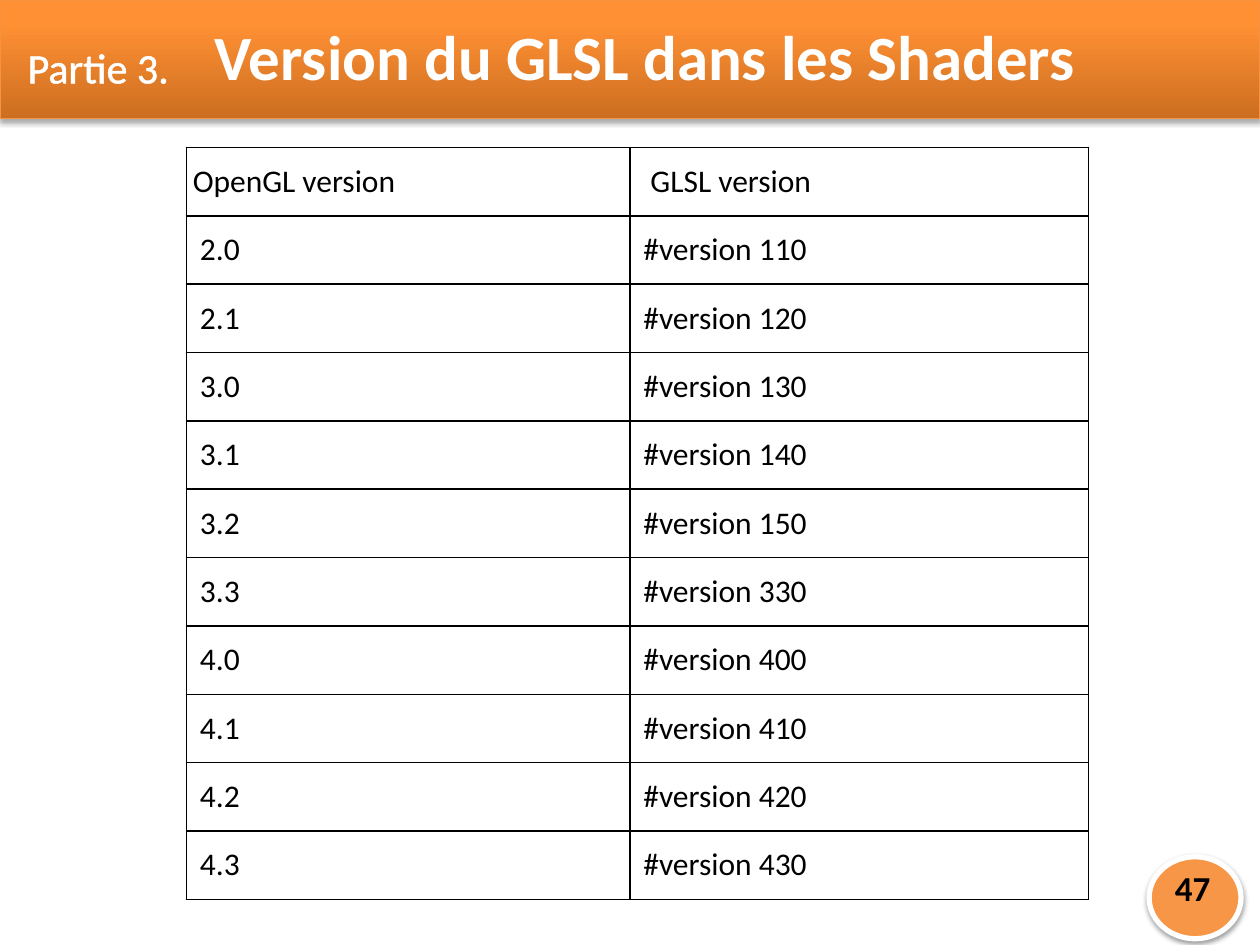
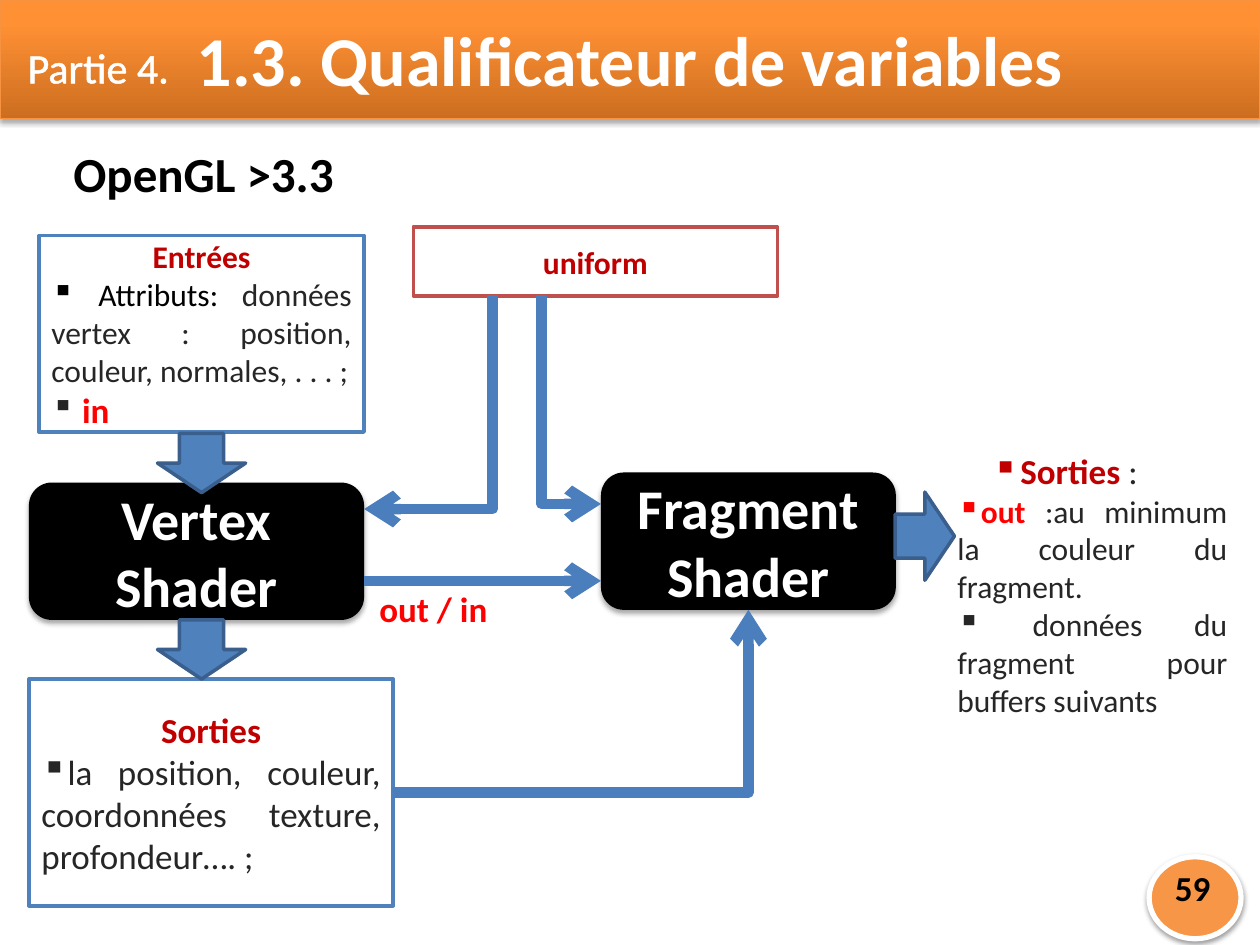
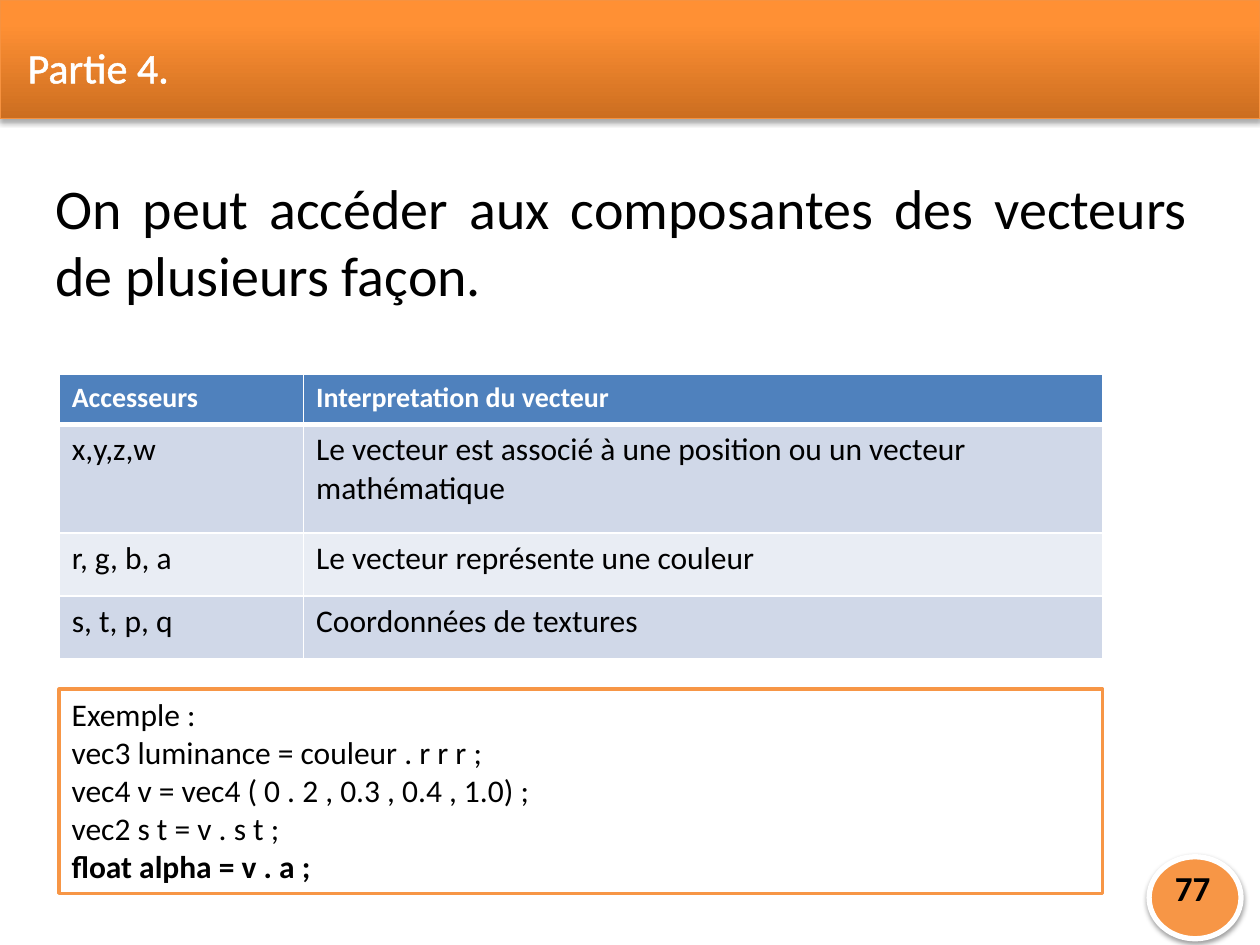
"""Build three slides of a course on GLSL shaders."""
import copy
import dataclasses
import typing

import pptx
import pptx.dml.color
import pptx.enum.shapes
import pptx.enum.text
import pptx.oxml
import pptx.oxml.ns
import pptx.util

SHAPE = pptx.enum.shapes.MSO_SHAPE
LINK = pptx.enum.shapes.MSO_CONNECTOR
ALIGN = pptx.enum.text.PP_ALIGN
ANCHOR = pptx.enum.text.MSO_ANCHOR
qn = pptx.oxml.ns.qn

WIDE, HIGH = pptx.util.Inches(10), pptx.util.Inches(7.5)
COLS, ROWS = 100, 75
FACE = "Calibri"
BLACK, WHITE, GREY = "000000", "FFFFFF", "262626"
BLUE, EDGE, WIRE = "4F81BD", "3A5F8C", "4B7EBC"
ORANGE, DARK, RED, ROSE = "F79646", "C00000", "FF0000", "C0504D"
BAND = ((0, "CC6E20"), (0.8, "FF9034"), (1, "FF9136"))


class Box(typing.NamedTuple):
    x: float
    y: float
    w: float
    h: float


class Run(typing.NamedTuple):
    text: str
    color: str = BLACK
    size: float = 18
    bold: bool = False


class Para(typing.NamedTuple):
    runs: tuple[Run, ...]
    align: typing.Any = ALIGN.LEFT
    mark: bool = False
    left: float = 0
    hang: float = 0
    space: float | None = None
    rim: float = 0


@dataclasses.dataclass
class Block:
    box: Box
    paras: tuple[Para, ...] = ()
    form: typing.Any = None
    fill: str | None = None
    line: str | None = None
    thick: float = 2
    anchor: typing.Any = ANCHOR.TOP
    turn: float = 0
    shade: int = 0


@dataclasses.dataclass
class Grid:
    box: Box
    cols: tuple[float, ...]
    rows: tuple[float, ...]
    cells: tuple[tuple[str, ...], ...]
    edge: str
    head: Run
    fills: tuple[str | None, ...]
    rule: float = 1
    anchor: typing.Any = ANCHOR.TOP
    pads: tuple[float, float] = (1, 0.5)
    shifts: tuple[tuple[float, float], ...] = ((0, 0), (0, 0))


class Wire(typing.NamedTuple):
    x1: float
    y1: float
    x2: float
    y2: float
    bend: str = ""


def col(n: float) -> pptx.util.Emu:
    return pptx.util.Emu(round(n * WIDE / COLS))


def row(n: float) -> pptx.util.Emu:
    return pptx.util.Emu(round(n * HIGH / ROWS))


def place(box: Box) -> tuple:
    return col(box.x), row(box.y), col(box.w), row(box.h)


def tint(code: str) -> pptx.dml.color.RGBColor:
    return pptx.dml.color.RGBColor.from_string(code)


def node(tag: str, inner: str = "", **attrs: typing.Any) -> typing.Any:
    pairs = " ".join(f'{key}="{val}"' for key, val in attrs.items())
    space = pptx.oxml.ns.nsdecls("a")
    return pptx.oxml.parse_xml(f"<a:{tag} {space} {pairs}>{inner}</a:{tag}>")


def solid(code: str) -> str:
    return f'<a:solidFill><a:srgbClr val="{code}"/></a:solidFill>'


def style(font: typing.Any, run: Run) -> None:
    font.name, font.size, font.bold = FACE, pptx.util.Pt(run.size), run.bold
    font.color.rgb = tint(run.color)


def write(frame: typing.Any, paras: tuple[Para, ...]) -> None:
    for i, para in enumerate(paras):
        p = frame.add_paragraph() if i else frame.paragraphs[0]
        p.alignment = para.align
        if para.space:
            p.line_spacing = para.space
        if para.mark:
            props = p._p.get_or_add_pPr()
            props.set("marL", str(col(para.left)))
            props.set("indent", str(col(para.hang)))
            props.append(node("buChar", char="▪"))
        base = para.runs[0]
        style(p.font, base)
        for item in para.runs:
            run = p.add_run()
            run.text = item.text
            if item[1:] != base[1:]:
                style(run.font, item)
            if para.rim:
                wide = pptx.util.Pt(para.rim)
                line = node("ln", solid(item.color), w=wide)
                run._r.get_or_add_rPr().insert(0, line)


def draw(slide: typing.Any, block: Block) -> typing.Any:
    if block.form is None:
        shape = slide.shapes.add_textbox(*place(block.box))
    else:
        shape = slide.shapes.add_shape(block.form, *place(block.box))
        shape.shadow.inherit = False
        shape.rotation = block.turn
        if block.fill:
            shape.fill.solid()
            shape.fill.fore_color.rgb = tint(block.fill)
        if block.line:
            shape.line.color.rgb = tint(block.line)
            shape.line.width = pptx.util.Pt(block.thick)
        else:
            shape.line.fill.background()
        if block.shade:
            color = (f'<a:srgbClr val="{BLACK}">'
                     f'<a:alpha val="{block.shade * 1000}"/></a:srgbClr>')
            shade = node("outerShdw", color, blurRad=pptx.util.Pt(3.1),
                         dist=pptx.util.Pt(1.8), dir=5400000, rotWithShape=0)
            shape.element.spPr.find(qn("a:effectLst")).append(shade)
    if block.paras:
        frame = shape.text_frame
        frame.word_wrap = True
        frame.vertical_anchor = block.anchor
        write(frame, block.paras)
    return shape


def table(slide: typing.Any, grid: Grid) -> None:
    frame = slide.shapes.add_table(len(grid.rows), len(grid.cols), *place(grid.box))
    sheet = frame.table
    sheet.first_row = sheet.horz_banding = False
    for i, wide in enumerate(grid.cols):
        sheet.columns[i].width = col(wide)
    for r, high in enumerate(grid.rows):
        sheet.rows[r].height = row(high)
        for c, text in enumerate(grid.cells[r]):
            cell = sheet.cell(r, c)
            side, top = grid.pads
            cell.margin_left = col(side + grid.shifts[min(r, 1)][c])
            cell.margin_right = col(side)
            cell.margin_top = cell.margin_bottom = row(top)
            cell.vertical_anchor = grid.anchor
            props = cell._tc.get_or_add_tcPr()
            for tag in ("lnL", "lnR", "lnT", "lnB"):
                heavy = (r, tag) in ((0, "lnB"), (1, "lnT"))
                wide = pptx.util.Pt(grid.rule if heavy else 1)
                props.append(node(tag, solid(grid.edge), w=wide))
            fill = grid.fills[r % 2 + 1 if r else 0]
            if fill:
                cell.fill.solid()
                cell.fill.fore_color.rgb = tint(fill)
            else:
                cell.fill.background()
            run = Run(text) if r else grid.head._replace(text=text)
            write(cell.text_frame, (Para((run,)),))


def join(slide: typing.Any, wire: Wire) -> None:
    x1, y1, x2, y2, bend = wire
    if bend == "down":
        side = 1 if x2 > x1 else -1
        midx, midy = (x1 + x2) / 2, (y1 + y2) / 2
        halfw, halfh = (y2 - y1) / 2, abs(x2 - x1) / 2
        x1, x2 = midx + side * halfw, midx - side * halfw
        if side < 0:
            x1, x2 = midx - halfw, midx + halfw
        y1, y2 = midy - halfh, midy + halfh
    kind = LINK.ELBOW if bend else LINK.STRAIGHT
    link = slide.shapes.add_connector(kind, col(x1), row(y1), col(x2), row(y2))
    props = link.element.spPr
    if bend:
        props.find(qn("a:prstGeom")).set("prst", "bentConnector2")
    if bend == "down":
        angle = 270 if side > 0 else 90
        props.find(qn("a:xfrm")).set("rot", str(angle * 60000))
    link.line.color.rgb = tint(WIRE)
    link.line.width = pptx.util.Pt(6)
    props.find(qn("a:ln")).append(node("tailEnd", type="arrow"))
    props.append(node("effectLst"))


def label(text: str, color: str, size: float = 18) -> Para:
    return Para((Run(text, color, size, True),), ALIGN.CENTER)


def point(*runs: Run, left: float = 0, hang: float = 0) -> Para:
    return Para(runs, ALIGN.JUSTIFY, True, left, hang)


def title(text: str, size: float, box: Box) -> Block:
    return Block(box, (label(text, WHITE, size),), anchor=ANCHOR.MIDDLE)


def start(deck: typing.Any, part: int, page: int, head: Block | None = None) -> typing.Any:
    slide = deck.slides.add_slide(deck.slide_layouts[6])
    band = draw(slide, Block(Box(0, 0, COLS, 9.4), form=SHAPE.RECTANGLE,
                             line="F69240", thick=0.75, shade=35))
    band.fill.gradient()
    band.fill.gradient_angle = 90
    stops = band.element.spPr.find(".//" + qn("a:gsLst"))
    stops.append(copy.deepcopy(stops[0]))
    for stop, (pos, code) in zip(band.fill.gradient_stops, BAND):
        stop.position, stop.color.rgb = pos, tint(code)
    if head:
        draw(slide, head)
    number = Para((Run(str(page), BLACK, 20, True),), space=0.8)
    draw(slide, Block(Box(91.2, 68, 7.3, 6.5), (number,), SHAPE.OVAL,
                      ORANGE, WHITE, 3, shade=38))
    name = Para((Run(f"Partie {part}.", WHITE, 24),), ALIGN.CENTER, space=1.5, rim=1.45)
    draw(slide, Block(Box(0.8, 0.8, 14, 7.7), (name,)))
    return slide


def versions(deck: typing.Any) -> None:
    head = title("Version du GLSL dans les Shaders", 36, Box(9.4, 0.8, 83.6, 7.1))
    slide = start(deck, 3, 47, head)
    pairs = (("2.0", 110), ("2.1", 120), ("3.0", 130), ("3.1", 140), ("3.2", 150),
             ("3.3", 330), ("4.0", 400), ("4.1", 410), ("4.2", 420), ("4.3", 430))
    cells = (("OpenGL version", "GLSL version"),
             *((gl, f"#version {sl}") for gl, sl in pairs))
    high = 59.7 / len(cells)
    table(slide, Grid(Box(14.8, 11.7, 71.6, 59.7), (35.2, 36.4), (high,) * len(cells),
                      cells, BLACK, Run(""), (None,) * 3, anchor=ANCHOR.MIDDLE,
                      pads=(0.5, 0.5), shifts=((0, 1.13), (0.57, 0.57))))


def flow(deck: typing.Any) -> None:
    head = title("1.3. Qualificateur de variables", 40, Box(3.1, 0.8, 93.8, 7.7))
    slide = start(deck, 4, 59, head)
    inputs = (label("Entrées", DARK),
              point(Run(" Attributs: "),
                    Run("données vertex : position, couleur, normales, . . . ;", GREY)),
              point(Run(" ", GREY), Run("in", RED, 20, True)))
    outputs = (label("Sorties", DARK, 20),
               point(Run("la position, couleur, coordonnées texture, profondeur…. ;",
                         GREY, 20)))
    results = (point(Run("Sorties", DARK, 20, True), Run(" :", GREY, 20),
                     left=5, hang=-2.2),
               point(Run("out ", RED, bold=True),
                     Run(":au minimum la couleur du fragment.", GREY)),
               point(Run(" données du fragment pour buffers suivants", GREY)))
    for text, box in (("Vertex Shader", Box(2.3, 38.3, 26.6, 10.9)),
                      ("Fragment Shader", Box(47.7, 37.5, 23.4, 10.9))):
        draw(slide, Block(box, (label(text, WHITE, 32),), SHAPE.ROUNDED_RECTANGLE,
                          BLACK, anchor=ANCHOR.MIDDLE, shade=35))
    for paras, box, line in ((inputs, Box(3.1, 18.7, 25.8, 15.6), BLUE),
                             (outputs, Box(2.3, 53.9, 28.9, 18), BLUE),
                             ((label("uniform", DARK),), Box(32.8, 18, 28.9, 5.5), ROSE)):
        draw(slide, Block(box, paras, SHAPE.RECTANGLE, WHITE, line, anchor=ANCHOR.MIDDLE))
    for paras, box in (((label("OpenGL >3.3", BLACK, 28),), Box(4.7, 10.9, 22.9, 5.7)),
                       (results, Box(75, 35.2, 23.4, 22.6)),
                       ((label("out / in", RED, 20),), Box(28.9, 46.1, 11, 4.4))):
        draw(slide, Block(box, paras))
    for x, y, turn in ((12.5, 34.4, 0), (12.5, 49.2, 0), (69.9, 40.2, 270)):
        draw(slide, Block(Box(x, y, 7, 4.7), (), SHAPE.DOWN_ARROW, BLUE, EDGE, turn=turn))
    for wire in (Wire(39.1, 23.4, 28.9, 40.4, "down"), Wire(43, 23.4, 47.7, 40, "down"),
                 Wire(28.9, 46.1, 47.7, 46.1), Wire(31.2, 62.9, 59.4, 48.4, "side")):
        join(slide, wire)


def access(deck: typing.Any) -> None:
    slide = start(deck, 4, 77)
    intro = Run("On peut accéder aux composantes des vecteurs de plusieurs façon.", size=32)
    draw(slide, Block(Box(3.4, 13.3, 91.9, 54.7), (Para((intro,), ALIGN.JUSTIFY),)))
    cells = (("Accesseurs", "Interpretation du vecteur"),
             ("x,y,z,w", "Le vecteur est associé à une position ou un vecteur mathématique"),
             ("r, g, b, a", "Le vecteur représente une couleur"),
             ("s, t, p, q", "Coordonnées de textures"))
    table(slide, Grid(Box(4.7, 29.7, 82.8, 22.6), (19.4, 63.4), (4, 8.6, 5, 5), cells,
                      WHITE, Run("", WHITE, 16, True), (BLUE, "E9EDF4", "D0D8E8"), 3))
    code = ("Exemple :", "vec3 luminance = couleur . r r r ;",
            "vec4 v = vec4 ( 0 . 2 , 0.3 , 0.4 , 1.0) ;", "vec2 s t = v . s t ;",
            "float alpha = v . a ;")
    lines = tuple(Para((Run(text, bold=text == code[-1]),)) for text in code)
    draw(slide, Block(Box(4.7, 54.7, 82.8, 16.2), lines, SHAPE.RECTANGLE, WHITE, ORANGE))


def main() -> None:
    deck = pptx.Presentation()
    deck.slide_width, deck.slide_height = WIDE, HIGH
    for build in (versions, flow, access):
        build(deck)
    deck.save("out.pptx")


if __name__ == "__main__":
    main()
